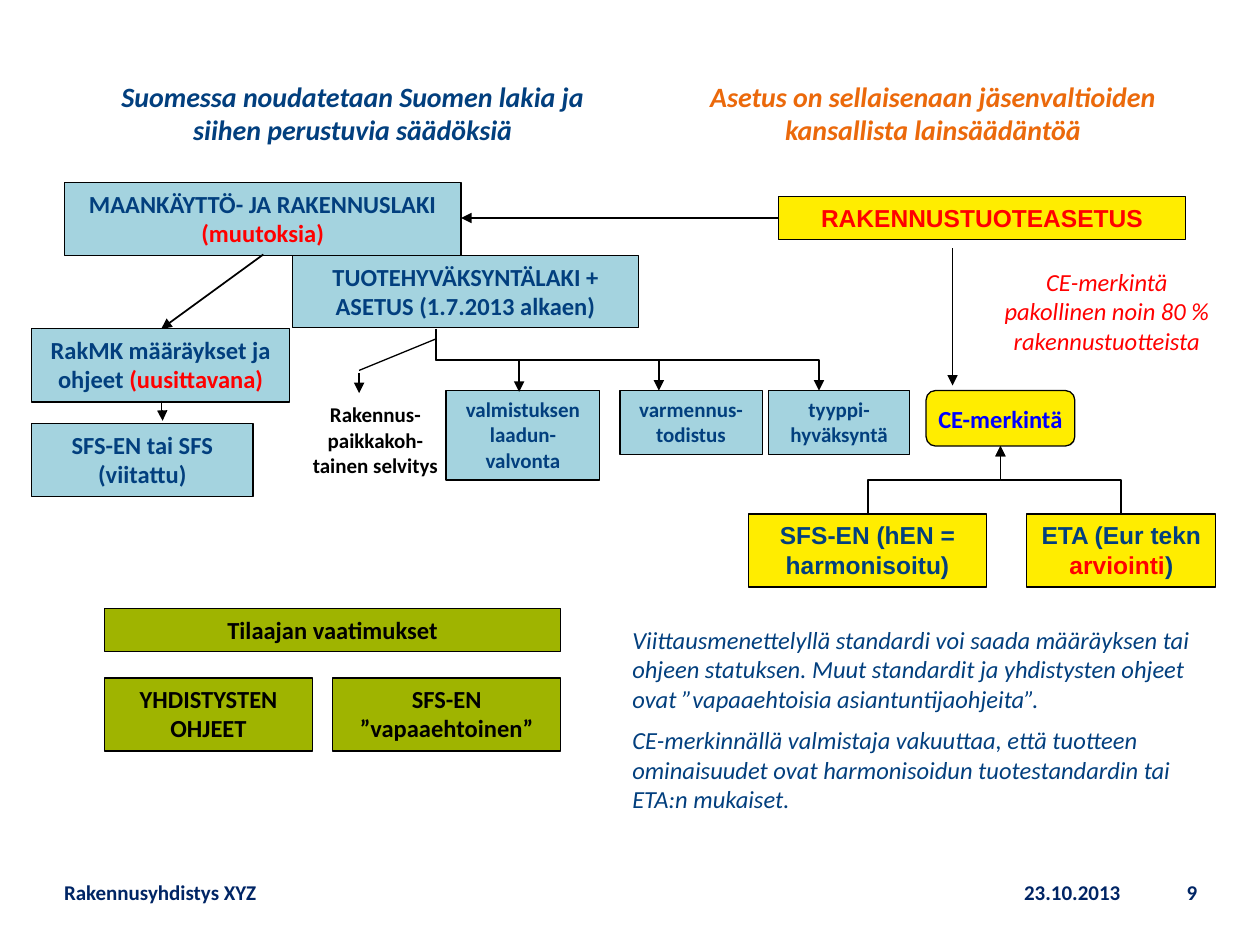
from dataclasses import dataclass

from lxml.etree import SubElement
from pptx import Presentation
from pptx.dml.color import RGBColor
from pptx.enum.shapes import MSO_CONNECTOR, MSO_SHAPE
from pptx.enum.text import MSO_ANCHOR, MSO_AUTO_SIZE, PP_ALIGN
from pptx.oxml.ns import qn
from pptx.util import Inches, Pt

BLUE, YELLOW, GREEN = "A4D3DF", "FFED00", "9FB400"
NAVY, RED, BLACK, ORANGE = "023F7E", "FF0000", "000000", "EB690B"
FOOTER_NAVY, LINK_BLUE = "002565", "0000FF"


@dataclass
class Style:
    size: int = 14
    color: str = NAVY
    font: str = "Calibri"
    bold: bool = True
    italic: bool = False
    align: PP_ALIGN = PP_ALIGN.CENTER
    anchor: MSO_ANCHOR = MSO_ANCHOR.TOP
    wrap: bool = True
    space_before: int = 0


@dataclass
class Area:
    left: float
    top: float
    width: float
    height: float
    text: str
    style: Style
    fill: str = ""
    accent: str = ""
    preset: MSO_SHAPE = MSO_SHAPE.RECTANGLE


@dataclass
class Link:
    start: tuple[float, float]
    end: tuple[float, float]
    width: float = 1
    head: bool = False
    tail: bool = True


def rgb(value: str) -> RGBColor:
    return RGBColor.from_string(value)


def write_text(shape, text: str, style: Style, accent: str = "") -> None:
    frame = shape.text_frame
    frame.word_wrap = style.wrap
    frame.auto_size = MSO_AUTO_SIZE.NONE
    frame.vertical_anchor = style.anchor
    for index, line in enumerate(text.split("\n")):
        paragraph = frame.add_paragraph() if index else frame.paragraphs[0]
        paragraph.alignment = style.align
        paragraph.space_before = Pt(style.space_before if index else 0)
        font = paragraph.font
        font.name, font.size = style.font, Pt(style.size)
        font.bold, font.italic = style.bold, style.italic
        font.color.rgb = rgb(style.color)
        before, found, after = line.partition(accent) if accent else (line, "", "")
        for part in filter(None, (before, found, after)):
            run = paragraph.add_run()
            run.text = part
            if part == accent:
                run.font.color.rgb = rgb(RED)


def draw_area(slide, area: Area) -> None:
    place = [Inches(value) for value in (area.left, area.top, area.width, area.height)]
    if area.fill:
        shape = slide.shapes.add_shape(area.preset, *place)
        shape.shadow.inherit = False
        shape.fill.solid()
        shape.fill.fore_color.rgb = rgb(area.fill)
        shape.line.color.rgb = rgb(BLACK)
        shape.line.width = Pt(0.75)
    else:
        shape = slide.shapes.add_textbox(*place)
    write_text(shape, area.text, area.style, area.accent)


def format_line(connector, link: Link) -> None:
    connector.line.color.rgb = rgb(BLACK)
    connector.line.width = Pt(link.width)
    line = connector.line._ln
    for tag, wanted in (("a:headEnd", link.head), ("a:tailEnd", link.tail)):
        if wanted:
            SubElement(line, qn(tag), type="triangle")
    SubElement(connector._element.spPr, qn("a:effectLst"))


def draw_straight(slide, link: Link) -> None:
    ends = [Inches(value) for value in (*link.start, *link.end)]
    format_line(slide.shapes.add_connector(MSO_CONNECTOR.STRAIGHT, *ends), link)


def draw_vertical_elbow(slide, link: Link) -> None:
    (start_x, start_y), (end_x, end_y) = link.start, link.end
    center_x, center_y = (start_x + end_x) / 2, (start_y + end_y) / 2
    half_width, half_height = (end_y - start_y) / 2, abs(end_x - start_x) / 2
    rightward = end_x > start_x
    side = half_width if rightward else -half_width
    ends = (center_x + side, center_y - half_height, center_x - side, center_y + half_height)
    connector = slide.shapes.add_connector(MSO_CONNECTOR.ELBOW, *[Inches(value) for value in ends])
    degrees = 270 if rightward else 90
    connector._element.spPr.find(qn("a:xfrm")).set("rot", str(degrees * 60000))
    format_line(connector, link)


HEADING = Style(size=16, italic=True)
BOX = Style()
ARIAL = Style(font="Arial")
SMALL = Style(size=12)
BLACK_BOX = Style(color=BLACK)
NOTE = Style(bold=False, italic=True, align=PP_ALIGN.LEFT, space_before=7)
FOOTER = Style(size=12, color=FOOTER_NAVY, align=PP_ALIGN.LEFT, anchor=MSO_ANCHOR.MIDDLE)
PAGE = Style(size=12, color=FOOTER_NAVY, align=PP_ALIGN.RIGHT, anchor=MSO_ANCHOR.MIDDLE)

AREAS = [
    Area(8.03, 6.88, 1.04, 0.4, "23.10.2013", FOOTER),
    Area(0.41, 6.88, 7.28, 0.4, "Rakennusyhdistys XYZ", FOOTER),
    Area(9.19, 6.88, 0.41, 0.4, "9", PAGE),
    Area(0.51, 1.45, 3.15, 0.58, "MAANKÄYTTÖ- JA RAKENNUSLAKI (muutoksia)", BOX, BLUE, "(muutoksia)"),
    Area(2.32, 2.03, 2.75, 0.57, "TUOTEHYVÄKSYNTÄLAKI + ASETUS (1.7.2013 alkaen)", BOX, BLUE),
    Area(6.18, 1.56, 3.23, 0.34, "RAKENNUSTUOTEASETUS", Style(font="Arial", color=RED), YELLOW),
    Area(5.16, 0.58, 4.49, 0.64, "Asetus on sellaisenaan jäsenvaltioiden kansallista lainsäädäntöä",
         Style(size=16, color=ORANGE, italic=True)),
    Area(0.25, 2.61, 2.05, 0.58, "RakMK määräykset ja ohjeet (uusittavana)", BOX, BLUE, "(uusittavana)"),
    Area(0.25, 3.36, 1.76, 0.58, "SFS-EN tai SFS (viitattu)", BOX, BLUE),
    Area(5.94, 4.08, 1.89, 0.58, "SFS-EN (hEN = harmonisoitu)", ARIAL, YELLOW),
    Area(8.15, 4.08, 1.5, 0.58, "ETA (Eur tekn arviointi)", ARIAL, YELLOW, "arviointi"),
    Area(7.35, 3.1, 1.18, 0.44, "CE-merkintä",
         Style(color=LINK_BLUE, anchor=MSO_ANCHOR.MIDDLE, wrap=False), YELLOW,
         preset=MSO_SHAPE.ROUNDED_RECTANGLE),
    Area(4.92, 4.91, 4.8, 1.63,
         "Viittausmenettelyllä standardi voi saada määräyksen tai ohjeen statuksen. "
         "Muut standardit ja yhdistysten ohjeet ovat ”vapaaehtoisia asiantuntijaohjeita”.\n"
         "CE-merkinnällä valmistaja vakuuttaa, että tuotteen ominaisuudet ovat "
         "harmonisoidun tuotestandardin tai ETA:n mukaiset.", NOTE),
    Area(0.83, 4.83, 3.62, 0.34, "Tilaajan vaatimukset", BLACK_BOX, GREEN),
    Area(0.83, 5.38, 1.65, 0.58, "YHDISTYSTEN OHJEET", BLACK_BOX, GREEN),
    Area(2.64, 5.38, 1.81, 0.58, "SFS-EN ”vapaaehtoinen”", BLACK_BOX, GREEN),
    Area(2.3, 3.14, 1.36, 0.71, "Rakennus-paikkakoh-tainen selvitys", Style(size=12, color=BLACK)),
    Area(3.54, 3.1, 1.22, 0.71, "valmistuksen laadun-valvonta", SMALL, BLUE),
    Area(4.92, 3.1, 1.13, 0.51, "varmennus-todistus", SMALL, BLUE),
    Area(6.1, 3.1, 1.12, 0.51, "tyyppi-hyväksyntä", SMALL, BLUE),
    Area(7.65, 2.07, 2.27, 0.81, "CE-merkintä\npakollinen noin 80 % rakennustuotteista",
         Style(color=RED, bold=False, italic=True)),
]

STRAIGHT_LINKS = [
    Link((2.09, 2.02), (1.28, 2.61)),
    Link((6.18, 1.73), (3.66, 1.73)),
    Link((7.56, 1.97), (7.56, 3.06)),
    Link((3.46, 2.69), (2.85, 2.94), width=0.75, tail=False),
    Link((2.85, 2.96), (2.85, 3.12), width=0.75),
    Link((4.12, 2.86), (4.12, 3.11), width=0.75),
]

ELBOW_LINKS = [
    Link((7.94, 3.54), (8.9, 4.08), head=True, tail=False),
    Link((7.94, 3.54), (6.89, 4.08), head=True, tail=False),
    Link((1.28, 3.18), (1.29, 3.34)),
    Link((3.46, 2.61), (5.23, 3.1)),
    Link((3.46, 2.61), (6.5, 3.1)),
]


def main() -> None:
    presentation = Presentation()
    presentation.slide_width, presentation.slide_height = Inches(10), Inches(7.5)
    slide = presentation.slides.add_slide(presentation.slide_layouts[5])
    title = slide.shapes.title
    title.left, title.top = Inches(0.83), Inches(0.58)
    title.width, title.height = Inches(3.94), Inches(0.64)
    write_text(title, "Suomessa noudatetaan Suomen lakia ja siihen perustuvia säädöksiä", HEADING)
    for area in AREAS:
        draw_area(slide, area)
    for link in STRAIGHT_LINKS:
        draw_straight(slide, link)
    for link in ELBOW_LINKS:
        draw_vertical_elbow(slide, link)
    presentation.save("out.pptx")


if __name__ == "__main__":
    main()
